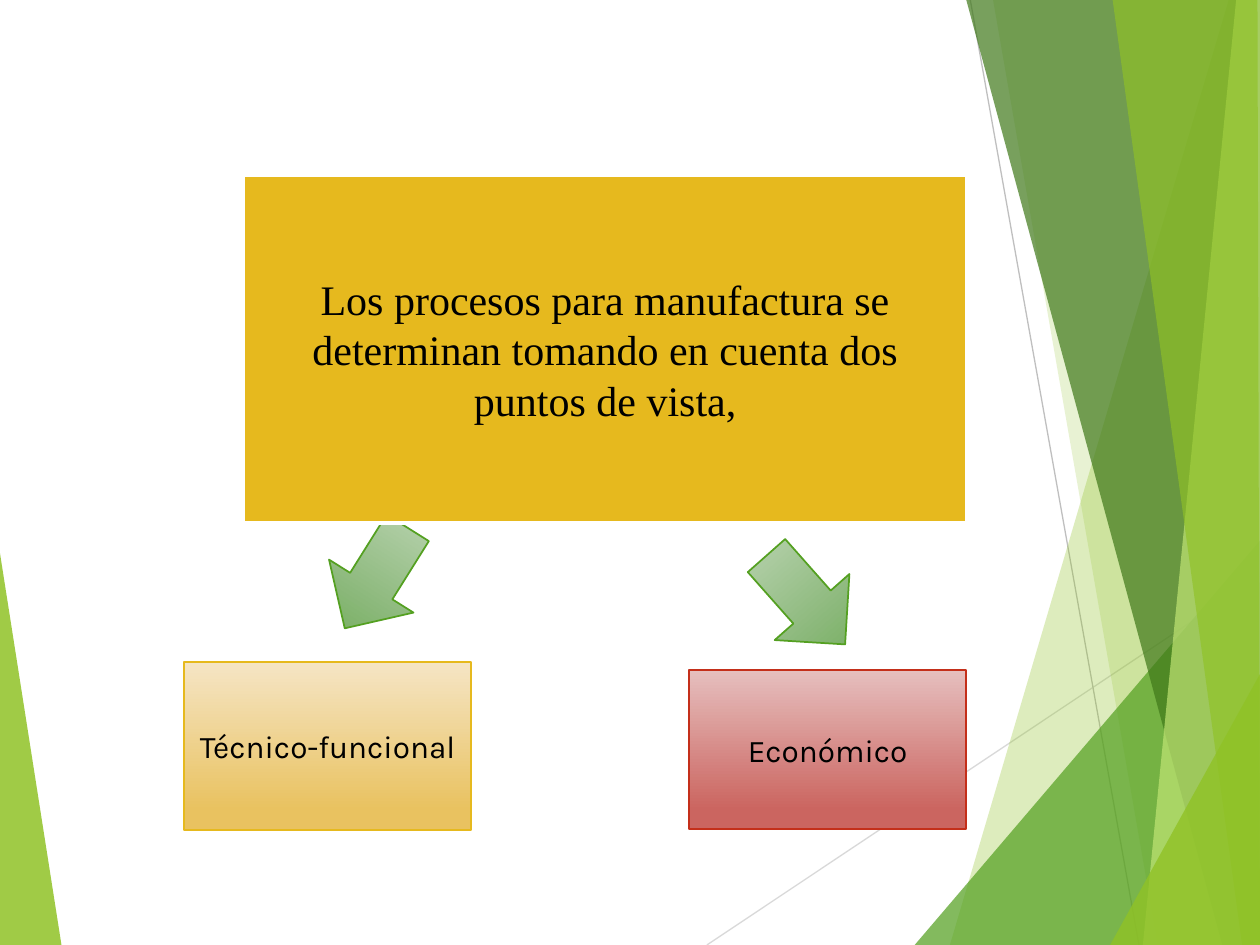
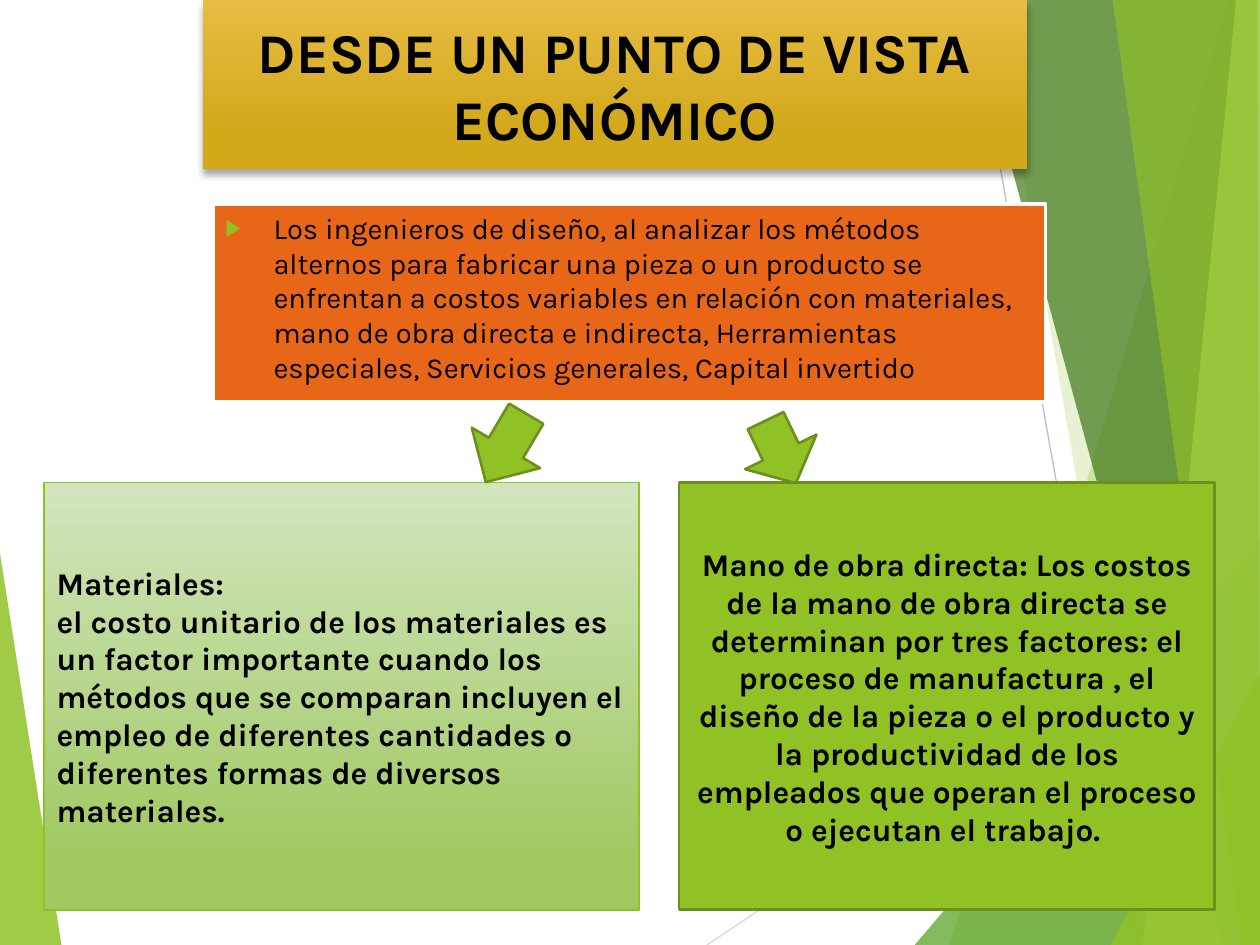
from dataclasses import dataclass
from typing import Optional

from lxml.etree import SubElement
from pptx import Presentation
from pptx.dml.color import RGBColor
from pptx.enum.shapes import MSO_CONNECTOR, MSO_SHAPE
from pptx.enum.text import MSO_ANCHOR, MSO_AUTO_SIZE, PP_ALIGN
from pptx.oxml.ns import qn
from pptx.util import Cm, Pt

WIDTH, HEIGHT = 25.4, 19.05

COLORS = {
    "lime": "90C226", "lime_edge": "6B901C", "pale_lime": "C0E474",
    "green": "54A021", "dark_green": "3F7819",
    "light_gray": "D9D9D9", "gray": "BFBFBF",
    "gold": "E6B91E", "orange": "E76618", "red": "C42F1A",
    "white": "FFFFFF", "black": "000000",
    "arrow_top": "C0D6B9", "arrow_bottom": "76AD61",
    "sand_top": "F5E5C5", "sand_bottom": "E9C260",
    "rose_top": "E6BFBE", "rose_bottom": "CB6560",
    "title_top": "E7BC43", "title_bottom": "D2A91B",
    "leaf_top": "D3E5BE", "leaf_bottom": "A0C962",
}

TEXT_FORMATS = {
    "statement": {"name": "Times New Roman", "size": Pt(24), "bold": False},
    "label": {"name": "Karla", "size": Pt(18), "bold": False},
    "detail": {"name": "Karla", "size": Pt(18), "bold": True},
    "title": {"name": "Karla", "size": Pt(32), "bold": True},
    "list": {"name": "Karla", "size": Pt(16.6), "bold": False},
}


@dataclass(frozen=True)
class Facet:
    points: tuple
    color: str
    opacity: int


@dataclass(frozen=True)
class Line:
    start: tuple
    end: tuple
    color: str


@dataclass(frozen=True)
class Look:
    """One fill colour, or two for a gradient whose last stop is at stop."""
    fill: tuple
    line: Optional[str] = None
    line_width: float = 1
    stop: float = 0.88


@dataclass(frozen=True)
class Arrow:
    box: tuple
    rotation: float
    look: Look


@dataclass(frozen=True)
class Panel:
    box: tuple
    look: Look
    text_format: str
    paragraphs: tuple
    alignment: PP_ALIGN = PP_ALIGN.CENTER
    anchor: MSO_ANCHOR = MSO_ANCHOR.MIDDLE


def right_band(top: float, bottom: float, color: str, opacity: int) -> Facet:
    """Full-height band from a slanted left edge to the slide's right edge."""
    points = ((top, 0), (bottom, HEIGHT), (WIDTH, HEIGHT), (WIDTH, 0))
    return Facet(points, color, opacity)


def right_corner(left: float, top: float, color: str, opacity: int) -> Facet:
    points = ((left, HEIGHT), (WIDTH, top), (WIDTH, HEIGHT))
    return Facet(points, color, opacity)


# Shared backdrop, from back to front
BACKDROP = (
    Facet(((0, 11.15), (1.24, HEIGHT), (0, HEIGHT)), "lime", 85),
    Line((14.25, HEIGHT), (WIDTH, 11.61), "light_gray"),
    Line((19.56, 0), (22.96, HEIGHT), "gray"),
    right_band(24.77, 19.15, "lime", 30),
    right_band(20.02, 23.34, "lime", 20),
    right_corner(18.44, 10.9, "green", 72),
    right_band(19.48, 24.64, "dark_green", 70),
    right_band(24.92, 23.04, "pale_lime", 70),
    Facet(((22.43, 0), (25.04, HEIGHT), (WIDTH, HEIGHT), (25.35, 0)), "lime", 65),
    right_corner(22.38, 13.59, "lime", 80),
)

# Slide 1: two points of view
SOFT_GREEN = Look(("arrow_top", "arrow_bottom"), "green")
VIEWPOINTS = (
    Arrow((6.58, 10.46, 2.01, 2.39), 32.1, SOFT_GREEN),
    Arrow((15.24, 10.9, 2.01, 2.39), 318.5, SOFT_GREEN),
    Panel((4.9, 3.53, 14.6, 7.01), Look(("gold",), "white", 2), "statement",
          ("Los procesos para manufactura se determinan tomando en cuenta dos "
           "puntos de vista,",)),
    Panel((3.71, 13.34, 5.79, 3.4), Look(("sand_top", "sand_bottom"), "gold"),
          "label", ("Técnico-funcional",)),
    Panel((13.89, 13.51, 5.59, 3.2), Look(("rose_top", "rose_bottom"), "red"),
          "label", ("Económico",)),
)

# Slide 2: the economic point of view
SOLID_LIME = Look(("lime",), "lime_edge", 1.5)
ECONOMIC_TITLE = Panel(
    (4.09, 0, 16.61, 3.4), Look(("title_top", "title_bottom"), stop=0.78), "title",
    ("DESDE UN PUNTO DE VISTA ECONÓMICO",))
ECONOMIC_LIST = Panel(
    (4.29, 4.11, 16.79, 3.99), Look(("orange",), "white", 2), "list",
    ("Los ingenieros de diseño, al analizar los métodos alternos para fabricar "
     "una pieza o un producto se enfrentan a costos variables en relación con "
     "materiales, mano de obra directa e indirecta, Herramientas especiales, "
     "Servicios generales, Capital invertido",),
    PP_ALIGN.LEFT, MSO_ANCHOR.TOP)
COSTS = (
    Panel((0.89, 9.73, 11.99, 8.61), Look(("leaf_top", "leaf_bottom"), "lime"),
          "detail",
          ("Materiales:",
           "el costo unitario de los materiales es un factor importante cuando "
           "los métodos que se comparan incluyen el empleo de diferentes "
           "cantidades o diferentes formas de diversos materiales."),
          PP_ALIGN.LEFT),
    Arrow((14.94, 8.41, 1.6, 1.4), 334.2, SOLID_LIME),
    Arrow((9.4, 8.23, 1.6, 1.6), 30.6, SOLID_LIME),
    Panel((13.69, 9.73, 10.8, 8.61), SOLID_LIME, "detail",
          ("Mano de obra directa: Los costos de la mano de obra directa se "
           "determinan por tres factores: el proceso de manufactura , el diseño "
           "de la pieza o el producto y la productividad de los empleados que "
           "operan el proceso o ejecutan el trabajo. ",)),
)


def rgb(name: str) -> RGBColor:
    return RGBColor.from_string(COLORS[name])


def apply_look(shape, look: Look) -> None:
    shape.shadow.inherit = False
    if len(look.fill) == 1:
        shape.fill.solid()
        shape.fill.fore_color.rgb = rgb(look.fill[0])
    else:
        shape.fill.gradient()
        shape.fill.gradient_angle = 270
        stops = zip(shape.fill.gradient_stops, look.fill, (0, look.stop))
        for stop, color, position in stops:
            stop.color.rgb = rgb(color)
            stop.position = position
    if look.line:
        shape.line.color.rgb = rgb(look.line)
        shape.line.width = Pt(look.line_width)
    else:
        shape.line.fill.background()


def draw_facet(slide, facet: Facet):
    first, *others = [(Cm(x), Cm(y)) for x, y in facet.points]
    builder = slide.shapes.build_freeform(*first)
    builder.add_line_segments(others, close=True)
    shape = builder.convert_to_shape()
    apply_look(shape, Look((facet.color,)))
    color = shape.element.spPr.find(".//" + qn("a:srgbClr"))
    SubElement(color, qn("a:alpha"), val=str(facet.opacity * 1000))
    return shape


def draw_line(slide, line: Line):
    ends = [Cm(value) for value in line.start + line.end]
    connector = slide.shapes.add_connector(MSO_CONNECTOR.STRAIGHT, *ends)
    connector.line.color.rgb = rgb(line.color)
    connector.line.width = Pt(0.75)
    SubElement(connector.element.spPr, qn("a:effectLst"))
    return connector


def move_backdrop_to_master(presentation, slide) -> None:
    """Draw the backdrop once and hand it to the master for every slide."""
    master_tree = presentation.slide_master.shapes.element
    for number, part in enumerate(BACKDROP, start=101):
        draw = draw_facet if isinstance(part, Facet) else draw_line
        element = draw(slide, part).element
        element.find(".//" + qn("p:cNvPr")).set("id", str(number))
        master_tree.append(element)


def draw_arrow(slide, arrow: Arrow) -> None:
    box = [Cm(value) for value in arrow.box]
    shape = slide.shapes.add_shape(MSO_SHAPE.DOWN_ARROW, *box)
    shape.rotation = arrow.rotation
    apply_look(shape, arrow.look)


def format_panel(shape, panel: Panel) -> None:
    """Place, colour and write a rectangle or a placeholder."""
    for name, value in zip(("left", "top", "width", "height"), panel.box):
        setattr(shape, name, Cm(value))
    apply_look(shape, panel.look)
    frame = shape.text_frame
    frame_format = {"word_wrap": True, "auto_size": MSO_AUTO_SIZE.NONE,
                    "vertical_anchor": panel.anchor}
    for name, value in frame_format.items():
        setattr(frame, name, value)
    frame.text = "\n".join(panel.paragraphs)
    for paragraph in frame.paragraphs:
        paragraph.alignment = panel.alignment
        font = paragraph.runs[0].font
        for name, value in TEXT_FORMATS[panel.text_format].items():
            setattr(font, name, value)
        font.color.rgb = rgb("black")


def draw_content(slide, parts: tuple) -> None:
    for part in parts:
        if isinstance(part, Arrow):
            draw_arrow(slide, part)
        else:
            rectangle = slide.shapes.add_shape(MSO_SHAPE.RECTANGLE, 0, 0, 0, 0)
            format_panel(rectangle, part)


def add_bullet(paragraph) -> None:
    paragraph.space_before = Pt(10)
    properties = paragraph._p.get_or_add_pPr()
    indent = Cm(0.97)
    properties.set("marL", str(indent))
    properties.set("indent", str(-indent))
    bullet_color = SubElement(properties, qn("a:buClr"))
    SubElement(bullet_color, qn("a:srgbClr"), val=COLORS["lime"])
    SubElement(properties, qn("a:buSzPct"), val="80000")
    SubElement(properties, qn("a:buChar"), char="▶")


def add_drop_shadow(shape) -> None:
    effects = shape.element.spPr.find(qn("a:effectLst"))
    shadow = SubElement(effects, qn("a:outerShdw"), blurRad=str(Pt(4)),
                        dist=str(Pt(3)), dir="5400000", rotWithShape="0")
    color = SubElement(shadow, qn("a:srgbClr"), val=COLORS["black"])
    SubElement(color, qn("a:alpha"), val="35000")


def main() -> None:
    presentation = Presentation()
    presentation.slide_width = Cm(WIDTH)
    presentation.slide_height = Cm(HEIGHT)
    layouts = presentation.slide_layouts

    # Points of view
    slide = presentation.slides.add_slide(layouts.get_by_name("Blank"))
    move_backdrop_to_master(presentation, slide)
    draw_content(slide, VIEWPOINTS)

    # Economic point of view
    slide = presentation.slides.add_slide(layouts.get_by_name("Title and Content"))
    title, body = slide.shapes.title, slide.placeholders[1]
    format_panel(title, ECONOMIC_TITLE)
    add_drop_shadow(title)
    format_panel(body, ECONOMIC_LIST)
    add_bullet(body.text_frame.paragraphs[0])
    draw_content(slide, COSTS)

    presentation.save("out.pptx")


if __name__ == "__main__":
    main()
